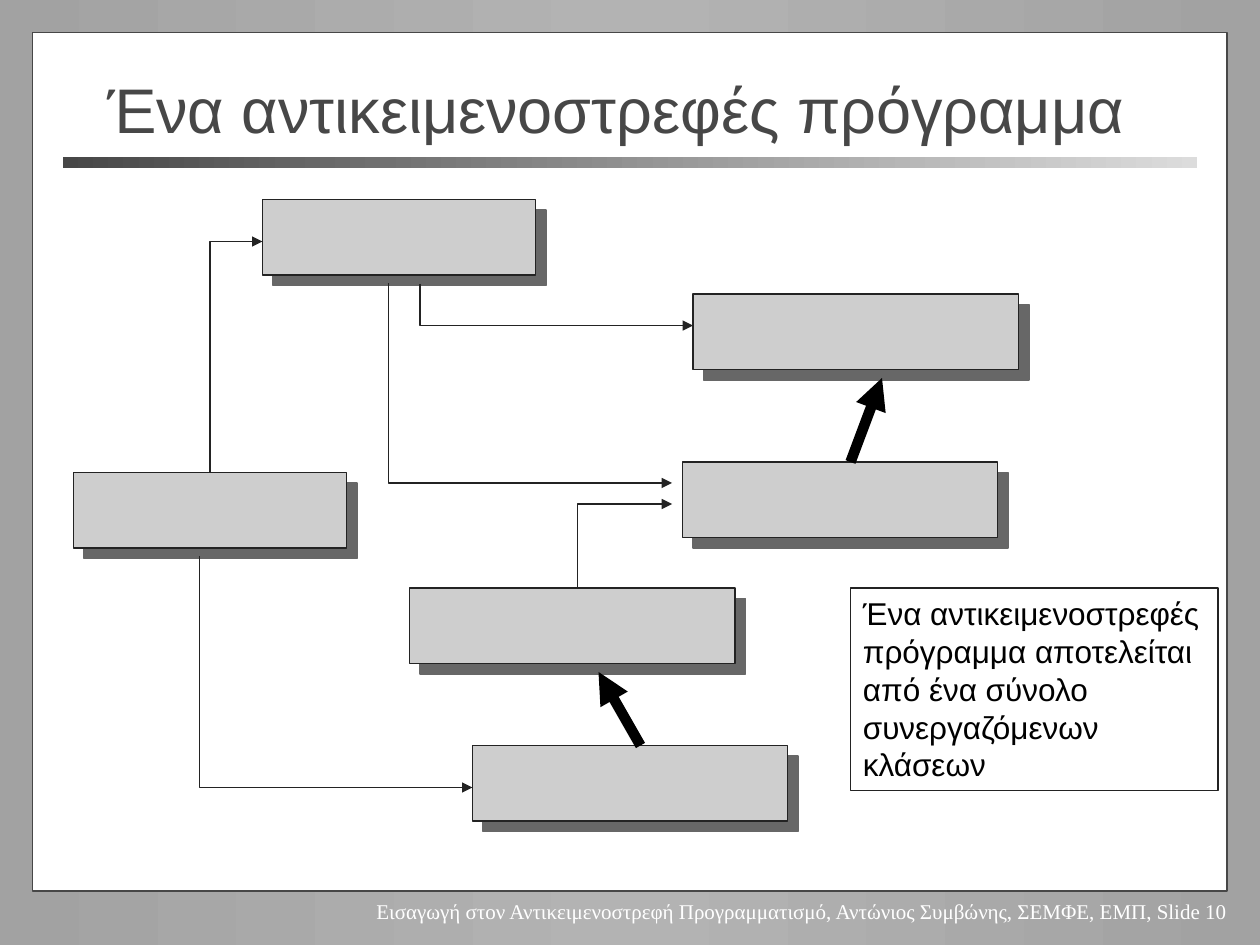
from copy import deepcopy
from pptx import Presentation
from pptx.dml.color import RGBColor
from pptx.enum.shapes import MSO_CONNECTOR, MSO_SHAPE
from pptx.enum.text import MSO_ANCHOR, MSO_AUTO_SIZE, PP_ALIGN
from pptx.oxml import parse_xml
from pptx.oxml.ns import nsdecls, qn
from pptx.util import Inches, Pt

RECT, STRAIGHT = MSO_SHAPE.RECTANGLE, MSO_CONNECTOR.STRAIGHT
LEFT, RIGHT = PP_ALIGN.LEFT, PP_ALIGN.RIGHT
TOP, MIDDLE = MSO_ANCHOR.TOP, MSO_ANCHOR.MIDDLE
NO_FIT = MSO_AUTO_SIZE.NONE

WHITE = RGBColor(0xFF, 0xFF, 0xFF)
BLACK = RGBColor(0, 0, 0)
DARK = RGBColor(0x47, 0x47, 0x47)
PALE = RGBColor(0xDC, 0xDC, 0xDC)
EDGE = RGBColor(0xA2, 0xA2, 0xA2)
CENTRE = RGBColor(0xB3, 0xB3, 0xB3)
BOX = RGBColor(0xCE, 0xCE, 0xCE)
INK = RGBColor(0x23, 0x23, 0x23)
SHADOW = RGBColor(0x67, 0x67, 0x67)

TITLE = "Ένα αντικειμενοστρεφές πρόγραμμα"
NOTE = "Ένα αντικειμενοστρεφές πρόγραμμα αποτελείται από ένα σύνολο συνεργαζόμενων κλάσεων"
FOOTER = "Εισαγωγή στον Αντικειμενοστρεφή Προγραμματισμό, Αντώνιος Συμβώνης, ΣΕΜΦΕ, ΕΜΠ, Slide 10"

COLUMNS, ROWS = 120, 90
BOX_ROWS = 7.2
CLASS_BOXES = [(25, 19, 26), (66, 28, 31), (65, 44, 30), (7, 45, 26), (39, 56, 31), (45, 71, 30)]
ELBOWS = [
    [(40, 27), (40, 31), (66, 31)],
    [(37, 27), (37, 46), (64, 46)],
    [(20, 45), (20, 23), (25, 23)],
    [(19, 53), (19, 75), (45, 75)],
    [(55, 56), (55, 48), (64, 48)],
]
THICK_ARROWS = [((81, 44), (84, 36)), ((61, 71), (57, 64))]

prs = Presentation()
prs.slide_width, prs.slide_height = Inches(10), Inches(7.5)
CELL = prs.slide_width / COLUMNS
s = prs.slides.add_slide(prs.slide_layouts[5])


def grid(*values):
    return [round(v * CELL) for v in values]


def set_gradient(fill, element, colors):
    fill.gradient()
    fill.gradient_angle = 0
    stops = next(element.iter(qn("a:gsLst")))
    for _ in colors[2:]:
        stops.append(deepcopy(stops[-1]))
    for i, (stop, color) in enumerate(zip(fill.gradient_stops, colors)):
        stop.color.rgb = color
        stop.position = i / (len(colors) - 1)


def set_line(sp, color, width):
    sp.line.color.rgb = color
    sp.line.width = Pt(width)


def add_head(sp):
    sp.line._get_or_add_ln().append(parse_xml(f'<a:tailEnd {nsdecls("a")} type="triangle"/>'))


def add_rect(*place):
    sp = s.shapes.add_shape(RECT, *grid(*place))
    sp.shadow.inherit = False
    sp.line.fill.background()
    return sp


def add_class_box(x, y, columns):
    sp = add_rect(x, y, columns, BOX_ROWS)
    sp.fill.solid()
    sp.fill.fore_color.rgb = BOX
    set_line(sp, INK, 1)
    sp._element.spPr.find(qn("a:effectLst")).append(parse_xml(
        f'<a:outerShdw {nsdecls("a")} dist="{Pt(8.5)}" dir="2700000" algn="ctr" rotWithShape="0">'
        f'<a:srgbClr val="{SHADOW}"/></a:outerShdw>'))


def add_elbow(points):
    start, *rest = [grid(*point) for point in points]
    builder = s.shapes.build_freeform(*start)
    builder.add_line_segments(rest, close=False)
    sp = builder.convert_to_shape()
    sp.shadow.inherit = False
    sp.fill.background()
    set_line(sp, INK, 1)
    add_head(sp)


def add_thick_arrow(start, end):
    sp = s.shapes.add_connector(STRAIGHT, *grid(*start, *end))
    set_line(sp, BLACK, 6)
    add_head(sp)
    sp._element.spPr.append(parse_xml(f'<a:effectLst {nsdecls("a")}/>'))


def set_text(sp, text, font, size, color, align=LEFT, anchor=TOP):
    tf = sp.text_frame
    tf.text = text
    tf.word_wrap = True
    tf.auto_size = NO_FIT
    tf.vertical_anchor = anchor
    p = tf.paragraphs[0]
    p.alignment = align
    p.font.name, p.font.size = font, Pt(size)
    p.font.color.rgb = color


set_gradient(s.background.fill, s._element, [EDGE, CENTRE, EDGE])

panel = add_rect(3.1, 3.1, COLUMNS - 6.2, ROWS - 8.2)
panel.fill.solid()
panel.fill.fore_color.rgb = WHITE
set_line(panel, DARK, 1)

rule = add_rect(6, 15, COLUMNS - 12, 1)
set_gradient(rule.fill, rule._element, [DARK, PALE])

footer = s.shapes.add_textbox(*grid(30, 85, 88.1, 3.6))
set_text(footer, FOOTER, "Times New Roman", 12, WHITE, align=RIGHT)

title = s.shapes.title
title.left, title.top, title.width, title.height = grid(9, 6.6, COLUMNS - 18, 7.4)
set_text(title, TITLE, "Arial", 36, DARK, anchor=MIDDLE)
s.shapes._spTree.append(title._element)

for box in CLASS_BOXES:
    add_class_box(*box)
for points in ELBOWS:
    add_elbow(points)
for start, end in THICK_ARROWS:
    add_thick_arrow(start, end)

note = s.shapes.add_textbox(*grid(81, 56, 35, 19.3))
set_text(note, NOTE, "Arial", 18, BLACK)
set_line(note, INK, 1)

prs.save("out.pptx")
